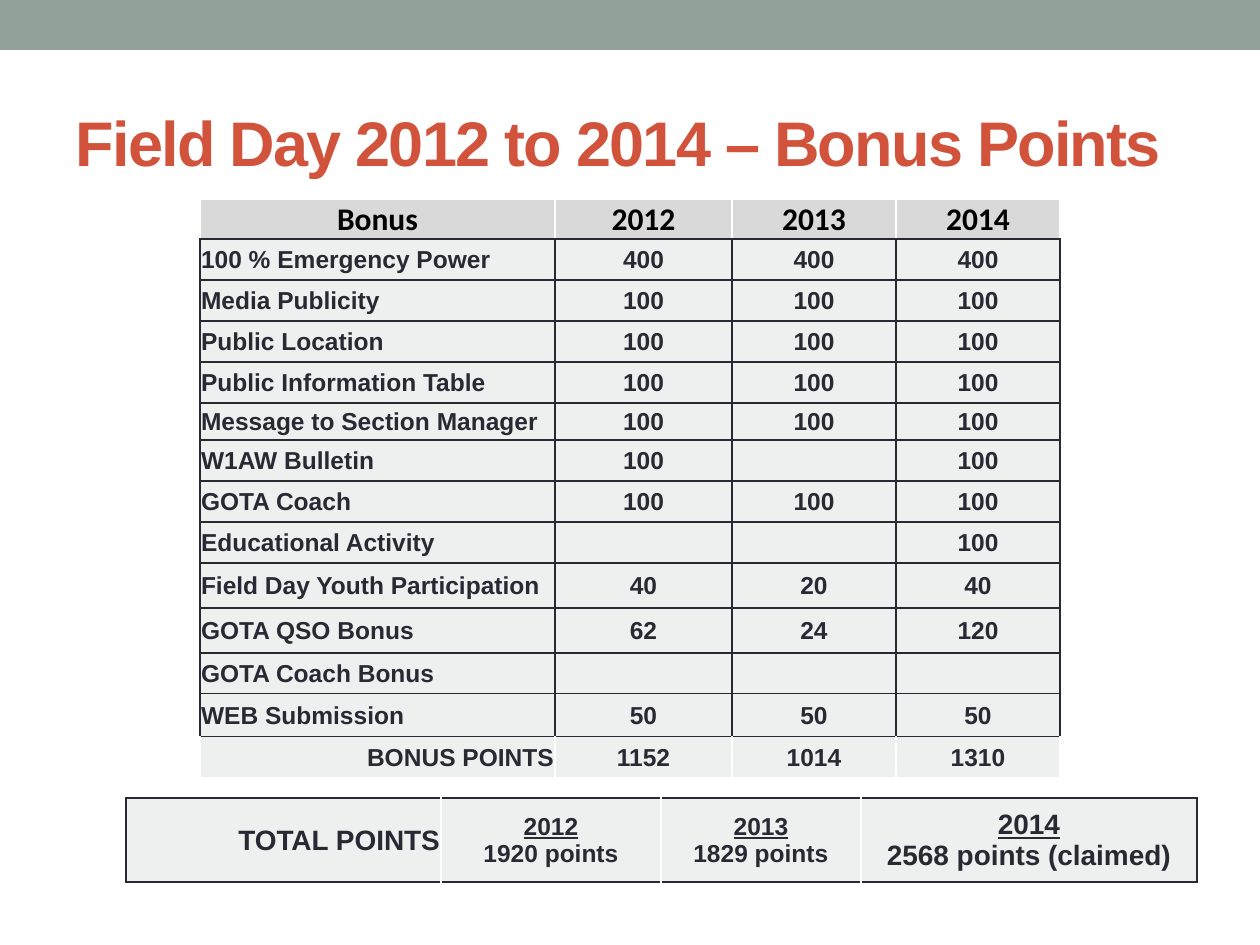
from pptx import Presentation
from pptx.dml.color import RGBColor
from pptx.enum.shapes import MSO_SHAPE as Shape
from pptx.enum.text import MSO_ANCHOR as Anchor, MSO_AUTO_SIZE as AutoSize, PP_ALIGN as Align
from pptx.oxml.ns import qn
from pptx.util import Emu, Pt
from lxml.etree import SubElement

TITLE = "Field Day 2012 to 2014 – Bonus Points"
HEADER = ("Bonus", "2012", "2013", "2014")
BONUSES = [
    ("100 % Emergency Power", "400", "400", "400"),
    ("Media Publicity", "100", "100", "100"),
    ("Public Location", "100", "100", "100"),
    ("Public Information Table", "100", "100", "100"),
    ("Message to Section Manager", "100", "100", "100"),
    ("W1AW Bulletin", "100", "", "100"),
    ("GOTA Coach", "100", "100", "100"),
    ("Educational Activity", "", "", "100"),
    ("Field Day Youth Participation", "40", "20", "40"),
    ("GOTA QSO Bonus", "62", "24", "120"),
    ("GOTA Coach Bonus", "", "", ""),
    ("WEB Submission", "50", "50", "50"),
]
BONUS_TOTAL = ("BONUS POINTS", "1152", "1014", "1310")
# text lines and size of each cell
TOTALS = [
    (["TOTAL POINTS"], 16),
    (["2012", "1920 points"], 14),
    (["2013", "1829 points"], 14),
    (["2014", "2568 points (claimed)"], 16),
]
BONUS_COLUMNS = [355, 177, 164, 164]
BONUS_ROWS = [40, 41, 41, 41, 41, 37, 41, 41, 41, 45, 45, 41, 43, 41]
TOTAL_COLUMNS = [315, 220, 200, 336]
TOTAL_ROWS = [84]

INK, WHITE, SAGE, RUST = "292934", "FFFFFF", "93A299", "D2533C"
HEADER_FILL, CELL_FILL = "D9D9D9", "EEF0EF"
HEADER_FONT = {"name": "Calibri", "size": Pt(18), "bold": True}
BODY_FONT = {"name": "Arial", "size": Pt(14), "bold": True}
TITLE_FONT = {"name": "Arial", "size": Pt(36), "bold": True}


def px(length):
    return Emu(round(length * 914400 / 126))


def rgb(code):
    return RGBColor.from_string(code)


def set_all(target, values):
    for name, value in values.items():
        setattr(target, name, value)


def place(shape, left, top, width, height):
    set_all(shape, {"left": px(left), "top": px(top), "width": px(width), "height": px(height)})


def add_span(para, text, font, color):
    span = para.add_run()
    span.text = text
    set_all(span.font, font)
    span.font.color.rgb = rgb(color)
    return span


def set_borders(cell, colors):
    """Draw 1 pt borders; colors are left, right, top, bottom."""
    properties = cell._tc.get_or_add_tcPr()
    for index, (side, color) in enumerate(zip(("lnL", "lnR", "lnT", "lnB"), colors)):
        line = properties.makeelement(qn("a:" + side), {"w": str(Pt(1))})
        properties.insert(index, line)
        fill = SubElement(line, qn("a:solidFill"))
        SubElement(fill, qn("a:srgbClr"), val=color)


def add_grid(page, left, top, columns, rows):
    frame = page.shapes.add_table(len(rows), len(columns), px(left), px(top),
                                  px(sum(columns)), px(sum(rows)))
    table = frame.table
    set_all(table, {"first_row": False, "horz_banding": False})
    for column, width in zip(table.columns, columns):
        column.width = px(width)
    for row, height in zip(table.rows, rows):
        row.height = px(height)
    return table


def fill_cell(cell, lines, font, color, align, fill, borders, anchor=Anchor.MIDDLE):
    set_all(cell, {"margin_left": px(1), "margin_right": px(1), "margin_top": px(1),
                   "margin_bottom": 0, "vertical_anchor": anchor})
    cell.fill.solid()
    cell.fill.fore_color.rgb = rgb(fill)
    set_borders(cell, borders)
    for index, text in enumerate(lines):
        para = cell.text_frame.paragraphs[0] if index == 0 else cell.text_frame.add_paragraph()
        para.alignment = align
        if text:
            span = add_span(para, text, font, color)
            span.font.underline = len(lines) > 1 and index == 0


def add_title(page):
    title = page.shapes.title
    place(title, 63, 73, 1166, 136)
    set_all(title.text_frame, {"word_wrap": True, "auto_size": AutoSize.NONE,
                               "vertical_anchor": Anchor.MIDDLE})
    para = title.text_frame.paragraphs[0]
    para.alignment = Align.LEFT
    span = add_span(para, TITLE, TITLE_FONT, RUST)
    span.font._element.set("spc", "-100")


def add_bar(page):
    bar = page.shapes.add_shape(Shape.RECTANGLE, 0, 0, px(1260), px(50))
    bar.shadow.inherit = False
    bar.fill.solid()
    bar.fill.fore_color.rgb = rgb(SAGE)
    bar.line.fill.background()


def add_bonus_table(page):
    table = add_grid(page, 200, 199, BONUS_COLUMNS, BONUS_ROWS)
    header = (HEADER_FONT, "000000", HEADER_FILL, (WHITE, WHITE, WHITE, INK), Align.CENTER, Anchor.BOTTOM)
    body = (BODY_FONT, INK, CELL_FILL, (INK, INK, INK, INK), Align.LEFT, Anchor.MIDDLE)
    total = (BODY_FONT, INK, CELL_FILL, (WHITE, WHITE, INK, WHITE), Align.RIGHT, Anchor.MIDDLE)
    rows = [(HEADER, header), *((bonus, body) for bonus in BONUSES), (BONUS_TOTAL, total)]
    for r, (texts, (font, color, fill, borders, first_align, anchor)) in enumerate(rows):
        for c, text in enumerate(texts):
            align = Align.CENTER if c else first_align
            fill_cell(table.cell(r, c), [text], font, color, align, fill, borders, anchor)


def add_total_table(page):
    table = add_grid(page, 126, 798, TOTAL_COLUMNS, TOTAL_ROWS)
    last = len(TOTALS) - 1
    for c, (lines, size) in enumerate(TOTALS):
        borders = (WHITE if c else INK, INK if c == last else WHITE, INK, INK)
        fill_cell(table.cell(0, c), lines, {**BODY_FONT, "size": Pt(size)}, INK,
                  Align.CENTER if c else Align.RIGHT, CELL_FILL, borders)


def main():
    deck = Presentation()
    set_all(deck, {"slide_width": px(1260), "slide_height": px(945)})
    page = deck.slides.add_slide(deck.slide_layouts[5])
    add_bar(page)
    add_title(page)
    add_bonus_table(page)
    add_total_table(page)
    deck.save("out.pptx")


if __name__ == "__main__":
    main()
